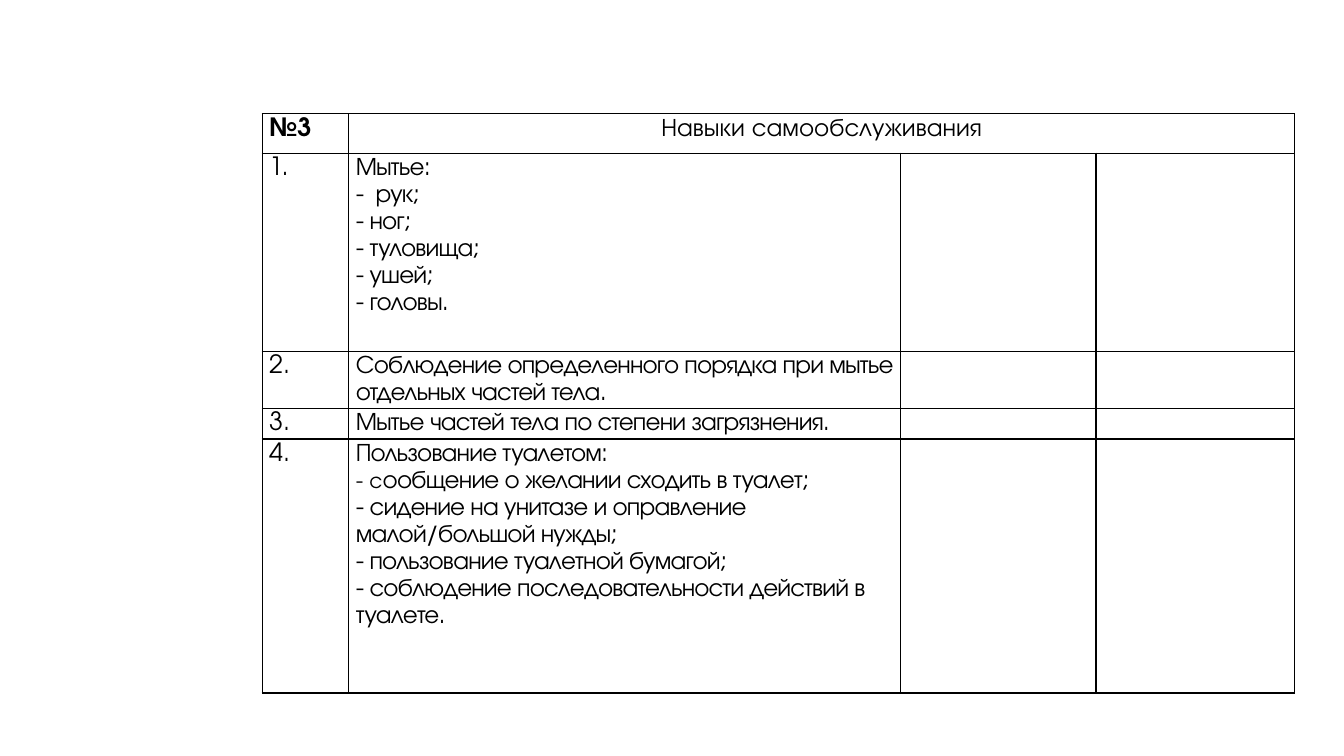
from dataclasses import dataclass

from lxml import etree
from pptx import Presentation
from pptx.dml.color import RGBColor
from pptx.enum.text import PP_ALIGN
from pptx.oxml.ns import qn
from pptx.util import Inches, Pt

LEFT, MID, JUST = PP_ALIGN.LEFT, PP_ALIGN.CENTER, PP_ALIGN.JUSTIFY
FACE = "TeX Gyre Adventor"
BLACK = "000000"
COLS = (0.86, 5.47, 1.94, 1.97)
PAD = {
    "margin_left": Inches(0.07),
    "margin_right": Inches(0.07),
    "margin_top": Inches(0),
    "margin_bottom": Inches(0),
}


@dataclass
class Piece:
    text: str
    size: int = 18
    bold: bool = False
    track: int = 0


@dataclass
class Skill:
    mark: str
    lines: list[str]
    height: float


SKILLS = [
    Skill("1.", ["Мытье:", "-  рук;", "- ног;", "- туловища;", "- ушей;", "- головы."], 1.97),
    Skill("2.", ["Соблюдение определенного порядка при мытье отдельных частей тела."], 0.56),
    Skill("3.", ["Мытье частей тела по степени загрязнения."], 0.3),
    Skill("4.", [
        "Пользование туалетом:",
        "- сообщение о желании сходить в туалет;",
        "- сидение на унитазе и оправление малой/большой нужды;",
        "- пользование туалетной бумагой;",
        "- соблюдение последовательности действий в туалете.",
    ], 2.52),
]
SMALL = "- с"
SPLIT = "- сообщение"


def color(code: str) -> RGBColor:
    return RGBColor.from_string(code)


def apply(item, values: dict) -> None:
    for name, value in values.items():
        setattr(item, name, value)


def frame(cell) -> None:
    apply(cell, PAD)
    props = cell._tc.get_or_add_tcPr()
    for side in ("a:lnL", "a:lnR", "a:lnT", "a:lnB"):
        line = etree.SubElement(props, qn(side), w=str(Pt(1)))
        fill = etree.SubElement(line, qn("a:solidFill"))
        etree.SubElement(fill, qn("a:srgbClr"), val=BLACK)
    cell.fill.background()


def write(cell, rows: list[list[Piece]], align: PP_ALIGN) -> None:
    body = cell.text_frame
    for index, row in enumerate(rows):
        para = body.add_paragraph() if index else body.paragraphs[0]
        apply(para, {"alignment": align, "line_spacing": 1.15})
        for piece in row:
            run = para.add_run()
            run.text = piece.text
            apply(run.font, {"name": FACE, "size": Pt(piece.size), "bold": piece.bold})
            run.font.color.rgb = color(BLACK)
            run._r.get_or_add_rPr().set("spc", str(piece.track))


def pieces(line: str) -> list[Piece]:
    if line.startswith(SPLIT):
        return [Piece(SMALL, 16), Piece(line.removeprefix(SMALL), track=-60)]
    return [Piece(line, track=-60)]


def main() -> None:
    deck = Presentation()
    apply(deck, {"slide_width": Inches(13.33), "slide_height": Inches(7.5)})
    slide = deck.slides.add_slide(deck.slide_layouts[6])
    highs = [0.39] + [skill.height for skill in SKILLS]
    table = slide.shapes.add_table(
        len(highs), len(COLS), Inches(2.6), Inches(1.13),
        Inches(sum(COLS)), Inches(sum(highs)),
    ).table
    apply(table, {"first_row": False, "horz_banding": False})
    for col, width in zip(table.columns, COLS):
        col.width = Inches(width)
    for row, height in zip(table.rows, highs):
        row.height = Inches(height)
    for cell in table.iter_cells():
        frame(cell)
    table.cell(0, 1).merge(table.cell(0, 3))
    write(table.cell(0, 0), [[Piece("№3", bold=True)]], JUST)
    write(table.cell(0, 1), [[Piece("Навыки самообслуживания")]], MID)
    for index, skill in enumerate(SKILLS, 1):
        write(table.cell(index, 0), [[Piece(skill.mark)]], JUST)
        write(table.cell(index, 1), [pieces(line) for line in skill.lines], LEFT)
    deck.save("out.pptx")


if __name__ == "__main__":
    main()
